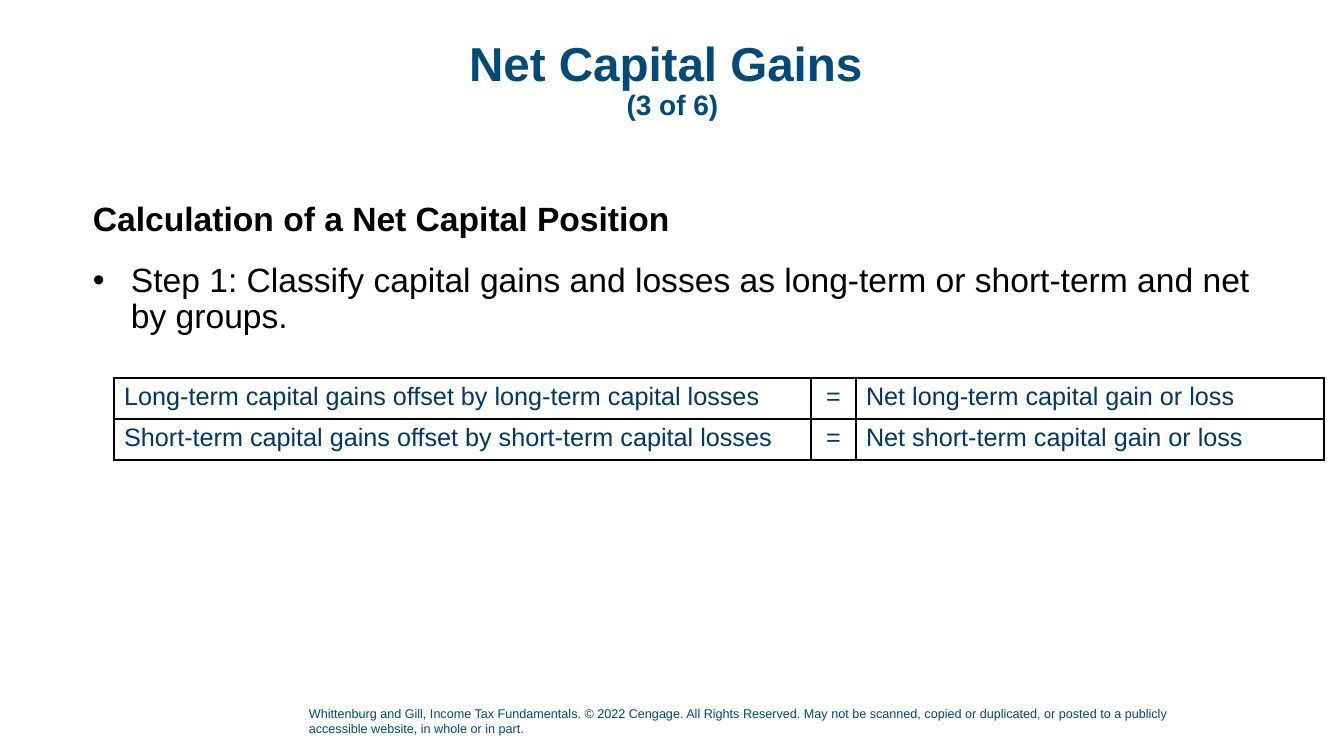
from lxml.etree import SubElement
from pptx import Presentation
from pptx.dml.color import RGBColor
from pptx.enum.text import PP_ALIGN as Align
from pptx.oxml.ns import qn
from pptx.util import Pt

PX = 914400 / 100.8
BLUE = RGBColor(0x00, 0x4A, 0x78)
NAVY = RGBColor(0x00, 0x38, 0x65)
BLACK = RGBColor(0x00, 0x00, 0x00)


def px(length):
    return round(length * PX)


def add_run(paragraph, text, size, color, bold=False):
    run = paragraph.add_run()
    run.text = text
    for name, value in {"name": "Arial", "size": Pt(size), "bold": bold}.items():
        setattr(run.font, name, value)
    run.font.color.rgb = color


presentation = Presentation()
presentation.slide_width, presentation.slide_height = px(1344), px(756)
slide = presentation.slides.add_slide(presentation.slide_layouts[6])

# Text boxes: left, top, width, height
frames = {}
for name, box in {
    "footer": (299, 701, 936, 40),
    "title": (93, 40, 1159, 75),
    "body": (93, 202, 1200, 260),
}.items():
    frame = slide.shapes.add_textbox(*map(px, box)).text_frame
    frame.word_wrap = True
    if name != "footer":
        for side in ("left", "top", "right", "bottom"):
            setattr(frame, f"margin_{side}", 0)
    frames[name] = frame

# Copyright line
add_run(
    frames["footer"].paragraphs[0],
    "Whittenburg and Gill, Income Tax Fundamentals. © 2022 Cengage. "
    "All Rights Reserved. May not be scanned, copied or duplicated, "
    "or posted to a publicly accessible website, in whole or in part.",
    9, BLUE,
)

# Title
title = frames["title"].paragraphs[0]
title.alignment = Align.CENTER
title.line_spacing = 0.9
add_run(title, "Net Capital Gains ", 34, BLUE, True)
title.add_line_break()
add_run(title, "(3 of 6)", 20, BLUE, True)

# Heading and bulleted step
heading = frames["body"].paragraphs[0]
step = frames["body"].add_paragraph()
for paragraph in (heading, step):
    paragraph.line_spacing = 0.9
    paragraph.space_after = Pt(8)
step.space_before = Pt(10)
properties = step._p.get_or_add_pPr()
properties.set("marL", str(px(38)))
properties.set("indent", str(-px(38)))
SubElement(properties, qn("a:buFont"), typeface="Arial")
SubElement(properties, qn("a:buChar"), char="•")
add_run(heading, "Calculation of a Net Capital Position", 24, BLACK, True)
add_run(step, "Step 1: Classify capital gains and losses as long-term "
        "or short-term and net by groups.", 24, BLACK)

# Netting table
terms = ("Long", "Short")
widths = (697, 45, 468)
row_height = 41
table = slide.shapes.add_table(
    len(terms), len(widths), px(114), px(378),
    px(sum(widths)), px(row_height * len(terms)),
).table
table.first_row = table.horz_banding = False
for column, width in zip(table.columns, widths):
    column.width = px(width)
for row_index, term in enumerate(terms):
    table.rows[row_index].height = px(row_height)
    lower = term.lower()
    texts = (
        f"{term}-term capital gains offset by {lower}-term capital losses",
        "=",
        f"Net {lower}-term capital gain or loss",
    )
    for column_index, text in enumerate(texts):
        cell = table.cell(row_index, column_index)
        paragraph = cell.text_frame.paragraphs[0]
        paragraph.alignment = Align.CENTER if text == "=" else Align.LEFT
        add_run(paragraph, text, 18, NAVY)
        # Borders come before the fill in the cell properties
        cell_properties = cell._tc.get_or_add_tcPr()
        for edge in ("lnL", "lnR", "lnT", "lnB"):
            line = SubElement(cell_properties, qn(f"a:{edge}"), w=str(Pt(1)))
            fill = SubElement(line, qn("a:solidFill"))
            SubElement(fill, qn("a:srgbClr"), val=str(BLACK))
        cell.fill.background()

presentation.save("out.pptx")
